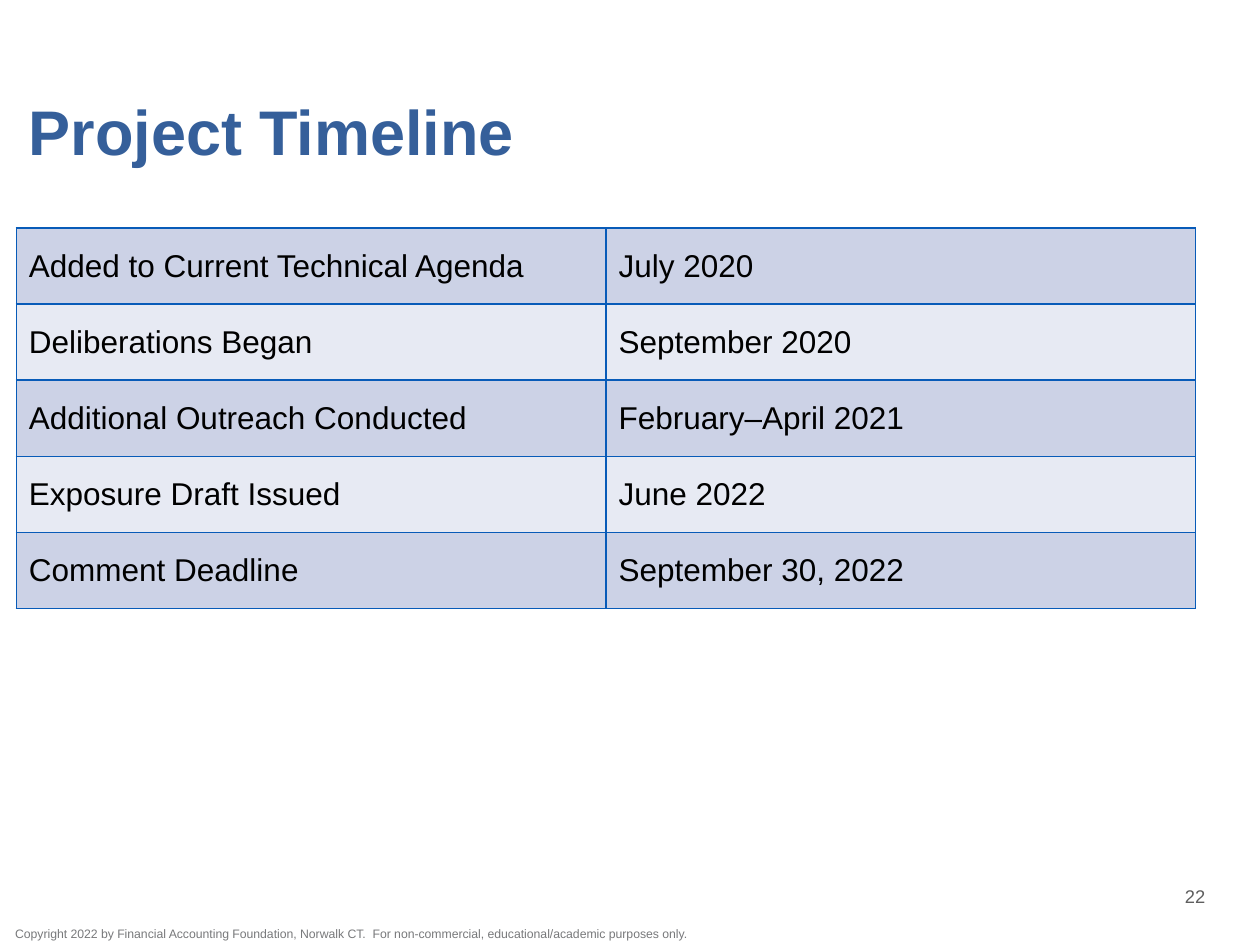
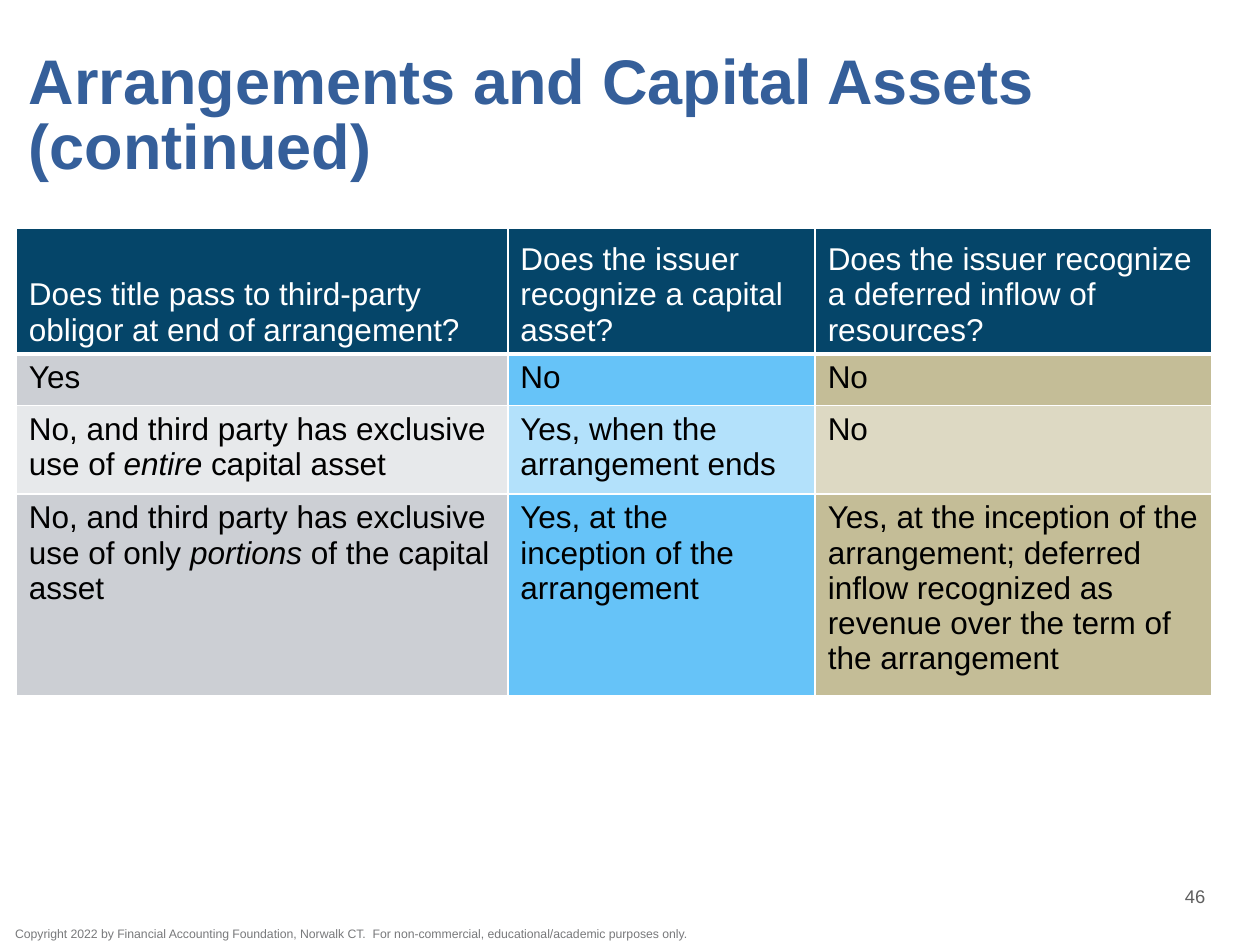
from lxml.etree import SubElement
from pptx import Presentation
from pptx.dml.color import RGBColor
from pptx.enum.text import MSO_ANCHOR, PP_ALIGN
from pptx.oxml.ns import qn
from pptx.util import Inches, Pt

FONT = "Arial"
BLACK, WHITE = "000000", "FFFFFF"
TITLE_BLUE, NUMBER_GRAY, COPYRIGHT_GRAY = "355F9A", "5F5F5F", "78797B"
GRID_BLUE, HEADER_NAVY = "085BB8", "054569"
TIMELINE_BANDS = ["CCD2E6", "E7EAF3"]
ANSWER_BANDS = [["CCCFD4", "66C3F8", "C4BD97"], ["E7E9EB", "B3E1FB", "DDD9C3"]]
COPYRIGHT = ("Copyright 2022 by Financial Accounting Foundation, Norwalk CT.  "
             "For non-commercial, educational/academic purposes only.")

MILESTONES = [
    ["Added to Current Technical Agenda", "July 2020"],
    ["Deliberations Began", "September 2020"],
    ["Additional Outreach Conducted", "February–April 2021"],
    ["Exposure Draft Issued", "June 2022"],
    ["Comment Deadline", "September 30, 2022"],
]
QUESTIONS = [
    "Does title pass to third-party obligor at end of arrangement?",
    "Does the issuer recognize a capital asset?",
    "Does the issuer recognize a deferred inflow of resources?",
]
ANSWERS = [
    ["Yes", "No", "No"],
    ["No, and third party has exclusive use of *entire* capital asset",
     "Yes, when the arrangement ends", "No"],
    ["No, and third party has exclusive use of only *portions* of the capital asset",
     "Yes, at the inception of the arrangement",
     "Yes, at the inception of the arrangement; deferred inflow recognized as "
     "revenue over the term of the arrangement"],
]


def rgb(color):
    """Turn a hex string into a colour."""
    return RGBColor.from_string(color)


class Deck:
    """Hold the shared style and the slide being built."""

    def __init__(self):
        """Start an empty 10 by 7.5 inch presentation."""
        self.presentation = Presentation()
        self.presentation.slide_width = Inches(10)
        self.presentation.slide_height = Inches(7.5)

    def start_slide(self, title, title_top, number):
        """Add a slide with its title, page number and copyright line."""
        self.slide = self.presentation.slides.add_slide(self.presentation.slide_layouts[6])
        self.text(COPYRIGHT, (0.12, 7.34, 5.43, 0.14), 7, COPYRIGHT_GRAY)
        heading = self.text(title, (0.13, title_top, 9.49, 0.98), 36, TITLE_BLUE, inset=0.1)
        heading.font.bold = True
        heading.line_spacing = Pt(37)
        page = self.text(str(number), (8.97, 6.95, 1.03, 0.33), 10.5, NUMBER_GRAY)
        page.alignment = PP_ALIGN.CENTER

    def set_text(self, paragraph, text, size, color):
        """Fill a paragraph, with the parts between asterisks in italics."""
        for index, part in enumerate(text.split("*")):
            run = paragraph.add_run()
            run.text = part
            if index % 2:
                run.font.italic = True
        paragraph.font.name = FONT
        paragraph.font.size = Pt(size)
        paragraph.font.color.rgb = rgb(color)

    def text(self, text, place, size, color, inset=0):
        """Add a vertically centred text box and return its paragraph."""
        frame = self.slide.shapes.add_textbox(*map(Inches, place)).text_frame
        frame.word_wrap = True
        frame.vertical_anchor = MSO_ANCHOR.MIDDLE
        frame.margin_left = Inches(inset)
        frame.margin_right = frame.margin_top = frame.margin_bottom = 0
        self.set_text(frame.paragraphs[0], text, size, color)
        return frame.paragraphs[0]

    def table(self, widths, heights):
        """Add an unbanded table with the given columns and rows."""
        table = self.slide.shapes.add_table(
            len(heights), len(widths), Inches(0.13), Inches(1.81),
            Inches(sum(widths)), Inches(sum(heights))).table
        table.first_row = table.horz_banding = False
        for column, width in zip(table.columns, widths):
            column.width = Inches(width)
        for row, height in zip(table.rows, heights):
            row.height = Inches(height)
        return table

    def cell(self, cell, text, fill, border, color=BLACK, anchor=MSO_ANCHOR.TOP, bottom=1):
        """Fill, outline and letter one table cell."""
        cell.vertical_anchor = anchor
        properties = cell._tc.get_or_add_tcPr()
        for side, width in (("L", 1), ("R", 1), ("T", 1), ("B", bottom)):
            line = SubElement(properties, qn(f"a:ln{side}"), w=str(Pt(width)))
            solid = SubElement(line, qn("a:solidFill"))
            SubElement(solid, qn("a:srgbClr"), val=border)
        cell.fill.solid()
        cell.fill.fore_color.rgb = rgb(fill)
        self.set_text(cell.text_frame.paragraphs[0], text, 18, color)


def build_timeline(deck):
    """Build the project timeline slide."""
    deck.start_slide("Project Timeline", 0.59, 22)
    timeline = deck.table([4.68] * 2, [3.02 / len(MILESTONES)] * len(MILESTONES))
    for row, milestone in enumerate(MILESTONES):
        for column, text in enumerate(milestone):
            deck.cell(timeline.cell(row, column), text, TIMELINE_BANDS[row % 2],
                      GRID_BLUE, anchor=MSO_ANCHOR.MIDDLE)


def build_arrangements(deck):
    """Build the slide on arrangements and capital assets."""
    deck.start_slide("Arrangements and Capital Assets (continued)", 0.44, 46)
    arrangements = deck.table([3.9, 2.44, 3.15], [0.94, 0.41, 0.66, 1.5])
    for column, question in enumerate(QUESTIONS):
        deck.cell(arrangements.cell(0, column), question, HEADER_NAVY, WHITE,
                  WHITE, MSO_ANCHOR.BOTTOM, bottom=3)
    for row, answers in enumerate(ANSWERS):
        for column, answer in enumerate(answers):
            deck.cell(arrangements.cell(row + 1, column), answer,
                      ANSWER_BANDS[row % 2][column], WHITE)


def main():
    """Build and save both slides."""
    deck = Deck()
    build_timeline(deck)
    build_arrangements(deck)
    deck.presentation.save("out.pptx")


if __name__ == "__main__":
    main()
